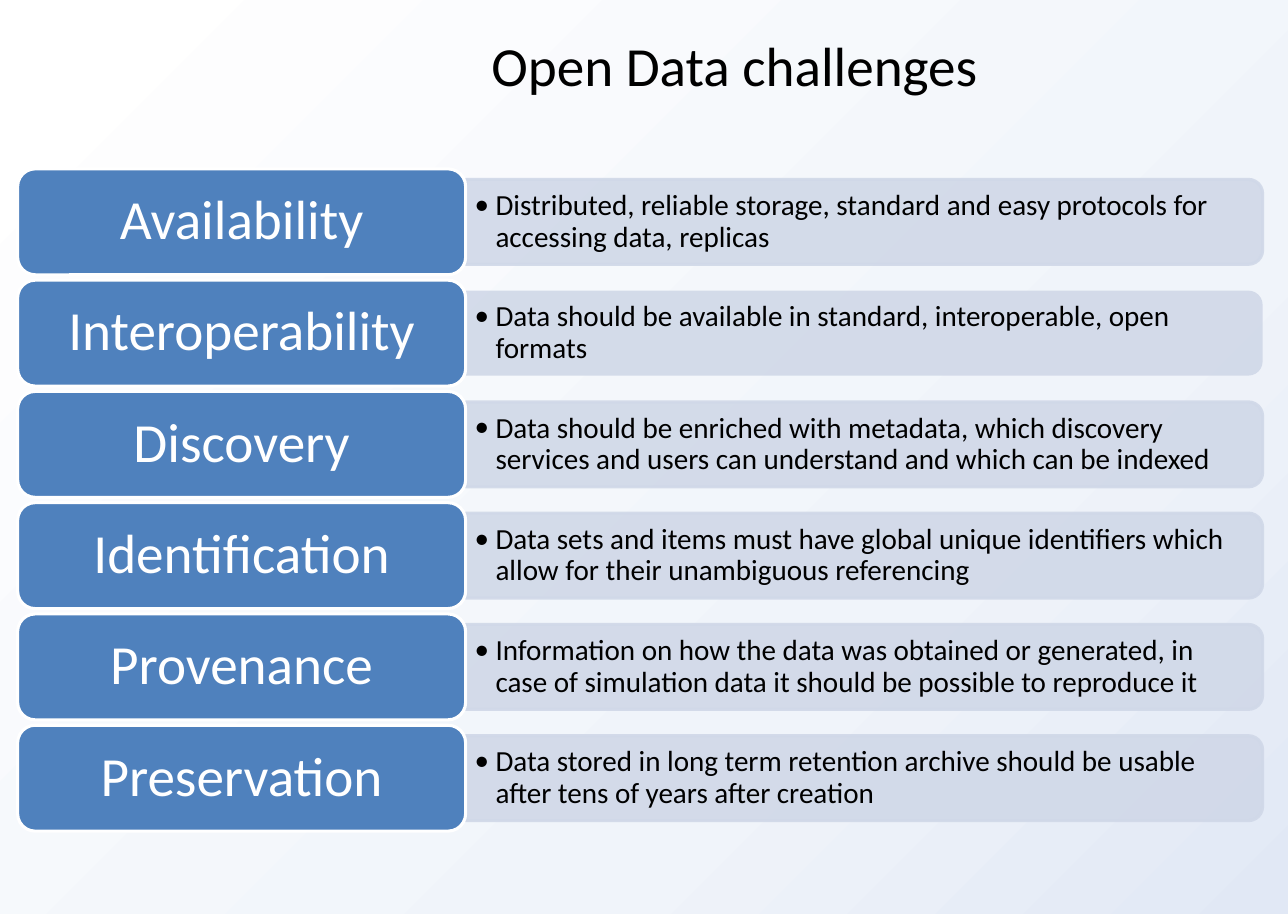
from lxml import etree
from pptx import Presentation
from pptx.dml.color import RGBColor
from pptx.enum.shapes import MSO_SHAPE
from pptx.enum.text import MSO_ANCHOR, PP_ALIGN
from pptx.oxml import parse_xml
from pptx.oxml.ns import nsdecls, qn
from pptx.util import Inches, Pt

LABEL_SHAPE = MSO_SHAPE.ROUNDED_RECTANGLE
BAND_SHAPE = MSO_SHAPE.ROUND_2_SAME_RECTANGLE
TOP, MIDDLE = MSO_ANCHOR.TOP, MSO_ANCHOR.MIDDLE
LEFT, CENTER = PP_ALIGN.LEFT, PP_ALIGN.CENTER

COLORS = {"label": "4F81BD", "band": "D0D8E8", "white": "FFFFFF", "black": "000000"}
BACKGROUND_STOPS = [(3, "FFFFFF"), (68, "F0F4FA"), (100, "E1E8F5")]

SLIDE_WIDTH, SLIDE_HEIGHT = 11.67, 8.28
FIRST_ROW_CENTER, LAST_ROW_CENTER = 2.01, 7.05
LABEL_LEFT, LABEL_WIDTH, LABEL_HEIGHT = 0.16, 4.06, 0.96
BAND_LEFT, BAND_WIDTH, BAND_HEIGHT = LABEL_LEFT + LABEL_WIDTH, 7.22, 0.77
DETAIL_WIDTH, DETAIL_HEIGHT = 7.18, 0.69

CHALLENGES = [
    ("Availability", "Distributed, reliable storage, standard and easy protocols for accessing data, replicas", True),
    ("Interoperability", "Data should be available in standard, interoperable, open formats", False),
    ("Discovery", "Data should be enriched with metadata, which discovery services and users can understand and which can be indexed", True),
    ("Identification", "Data sets and items must have global unique identifiers which allow for their unambiguous referencing", True),
    ("Provenance", "Information on how the data was obtained or generated, in case of simulation data it should be possible to reproduce it", True),
    ("Preservation", "Data stored in long term retention archive should be usable after tens of years after creation", True),
]
ROW_PITCH = (LAST_ROW_CENTER - FIRST_ROW_CENTER) / (len(CHALLENGES) - 1)


def write_text(shape, text, size, color, align, anchor, margins, spacing=1.0):
    frame = shape.text_frame
    frame_format = {
        "word_wrap": True,
        "vertical_anchor": anchor,
        "margin_left": Inches(margins[0]),
        "margin_right": Inches(margins[0]),
        "margin_top": Inches(margins[1]),
        "margin_bottom": Inches(margins[1]),
    }
    for name, value in frame_format.items():
        setattr(frame, name, value)
    paragraph = frame.paragraphs[0]
    paragraph.alignment = align
    paragraph.line_spacing = spacing
    run = paragraph.add_run()
    run.text = text
    for name, value in {"name": "Calibri", "size": Pt(size)}.items():
        setattr(run.font, name, value)
    run.font.color.rgb = RGBColor.from_string(COLORS[color])
    return paragraph


def paint(shape, fill, line):
    shape.shadow.inherit = False
    shape.fill.solid()
    shape.fill.fore_color.rgb = RGBColor.from_string(COLORS[fill])
    if line:
        shape.line.color.rgb = RGBColor.from_string(COLORS[line])
        shape.line.width = Pt(2)
    else:
        shape.line.fill.background()


presentation = Presentation()
presentation.slide_width = Inches(SLIDE_WIDTH)
presentation.slide_height = Inches(SLIDE_HEIGHT)
slide = presentation.slides.add_slide(presentation.slide_layouts[5])

stops = "".join(
    f'<a:gs pos="{position * 1000}"><a:srgbClr val="{color}"/></a:gs>'
    for position, color in BACKGROUND_STOPS
)
background = parse_xml(
    f'<p:bg {nsdecls("p", "a")}><p:bgPr><a:gradFill rotWithShape="1"><a:gsLst>{stops}</a:gsLst>'
    '<a:lin ang="2700000" scaled="0"/></a:gradFill><a:effectLst/></p:bgPr></p:bg>'
)
slide.element.find(qn("p:cSld")).insert(0, background)

title = slide.shapes.title
title_box = {"left": 1.97, "top": 0.22, "width": 9.37, "height": 1.03}
for name, value in title_box.items():
    setattr(title, name, Inches(value))
write_text(title, "Open Data challenges", 36, "black", CENTER, TOP, (0.11, 0.06))

for row, (name, detail, outlined) in enumerate(CHALLENGES):
    center = FIRST_ROW_CENTER + row * ROW_PITCH

    band = slide.shapes.add_shape(
        BAND_SHAPE,
        Inches(BAND_LEFT + (BAND_WIDTH - BAND_HEIGHT) / 2), Inches(center - BAND_WIDTH / 2),
        Inches(BAND_HEIGHT), Inches(BAND_WIDTH),
    )
    band.rotation = 90
    paint(band, "band", "band" if outlined else None)
    for color in band.element.spPr.iter(qn("a:srgbClr")):
        etree.SubElement(color, qn("a:alpha"), val="90000")

    detail_box = slide.shapes.add_textbox(
        Inches(BAND_LEFT), Inches(center - DETAIL_HEIGHT / 2),
        Inches(DETAIL_WIDTH), Inches(DETAIL_HEIGHT),
    )
    paragraph = write_text(detail_box, detail, 19, "black", LEFT, MIDDLE, (0.08, 0.04), 0.9)
    properties = paragraph._p.get_or_add_pPr()
    properties.set("marL", str(Inches(0.19)))
    properties.set("indent", str(-Inches(0.19)))
    etree.SubElement(properties, qn("a:buFont"), typeface="Calibri")
    etree.SubElement(properties, qn("a:buChar"), char="•")

    label = slide.shapes.add_shape(
        LABEL_SHAPE,
        Inches(LABEL_LEFT), Inches(center - LABEL_HEIGHT / 2),
        Inches(LABEL_WIDTH), Inches(LABEL_HEIGHT),
    )
    paint(label, "label", "white")
    write_text(label, name, 36, "white", CENTER, MIDDLE, (0.15, 0.07), 0.9)

presentation.save("out.pptx")
